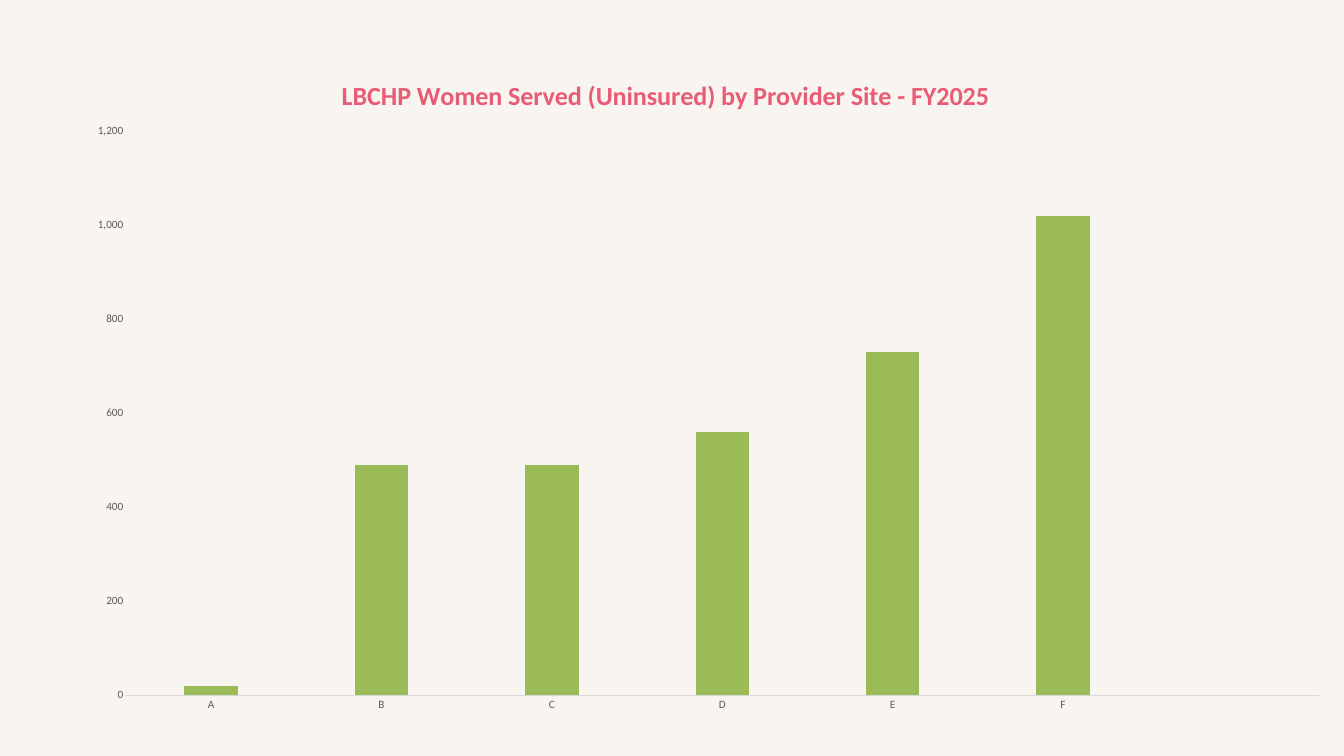
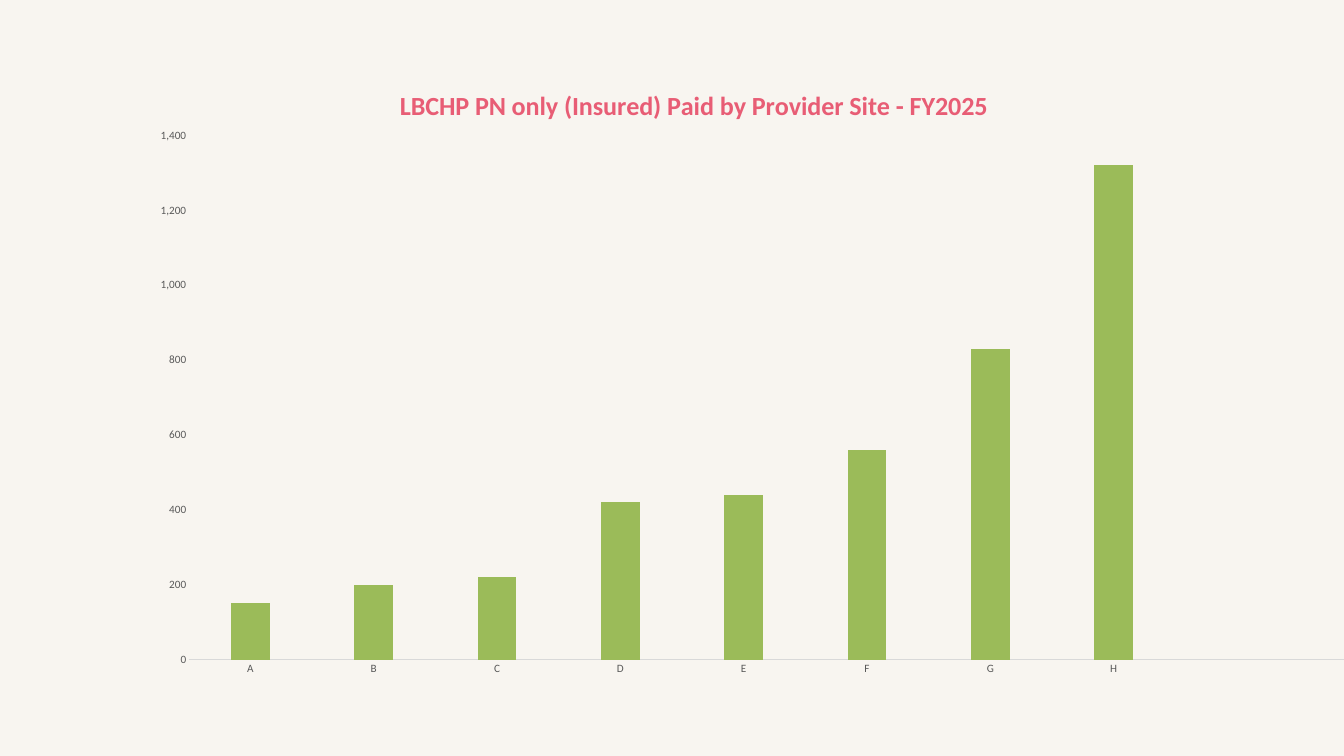
"""Build two slides of column charts on provider sites in FY2025."""
from pptx import Presentation
from pptx.chart.data import CategoryChartData as ChartData
from pptx.dml.color import RGBColor as RGB
from pptx.enum.chart import XL_CHART_TYPE as ChartType, XL_TICK_MARK as Tick
from pptx.oxml import parse_xml
from pptx.oxml.ns import nsdecls, qn
from pptx.util import Inches, Pt

COLORS = {
    "page": "F8F5F0",
    "title": "E85D75",
    "bar": "9BBB59",
    "label": "595959",
    "baseline": "D9D9D9",
}
FONT = "Calibri"


def write_text(frame, text, size, color, bold=False):
    frame.text = text
    font = frame.paragraphs[0].runs[0].font
    font.name, font.size, font.bold = FONT, Pt(size), bold
    font.color.rgb = RGB.from_string(COLORS[color])


def set_layout(parent, index, target="", **shares):
    for old in parent.findall(qn("c:layout")):
        parent.remove(old)
    area = f'<c:layoutTarget val="{target}"/>' if target else ""
    modes = "".join(f'<c:{key}Mode val="edge"/>' for key in shares if key in "xy")
    sizes = "".join(f'<c:{key} val="{share}"/>' for key, share in shares.items())
    parent.insert(index, parse_xml(
        f'<c:layout {nsdecls("c")}><c:manualLayout>{area}{modes}{sizes}'
        "</c:manualLayout></c:layout>"))


SITE_CHARTS = [
    {
        "title": "LBCHP Women Served (Uninsured) by Provider Site - FY2025",
        "counts": [20, 490, 490, 560, 730, 1020],
        "empty_slots": 1,
        "top_value": 1200,
        "frame": (0.054, 0.063, 0.946, 0.896),
        "plot": {"x": 0.042, "y": 0.123, "w": 0.938, "h": 0.833},
        "title_at": {"x": 0.208, "y": 0.038},
    },
    {
        "title": "LBCHP PN only (Insured) Paid by Provider Site - FY2025",
        "counts": [150, 200, 220, 420, 440, 560, 830, 1320],
        "empty_slots": 3,
        "top_value": 1500,
        "frame": (0.1125, 0.078, 1.0375, 0.8435),
        "plot": {"x": 0.027, "y": 0.061, "w": 0.973, "h": 0.881},
        "title_at": {"x": 0.175, "y": 0.038},
    },
]

deck = Presentation()
deck.slide_width, deck.slide_height = Inches(20), Inches(11.25)
blank = deck.slide_layouts[6]

for site_chart in SITE_CHARTS:
    slide = deck.slides.add_slide(blank)
    slide.background.fill.solid()
    slide.background.fill.fore_color.rgb = RGB.from_string(COLORS["page"])

    counts, empty_slots = site_chart["counts"], site_chart["empty_slots"]
    sites = ChartData(number_format="#,##0")
    sites.categories = list("ABCDEFGH"[:len(counts)]) + [""] * empty_slots
    sites.add_series("Series 1", counts + [None] * empty_slots)

    left, top, width, height = site_chart["frame"]
    chart = slide.shapes.add_chart(
        ChartType.COLUMN_CLUSTERED,
        int(left * deck.slide_width), int(top * deck.slide_height),
        int(width * deck.slide_width), int(height * deck.slide_height),
        sites).chart
    chart.has_legend = False
    chart.font.name, chart.font.size = FONT, Pt(10)

    chart.has_title = True
    title = chart.chart_title
    write_text(title.text_frame, site_chart["title"], size=28, color="title", bold=True)
    title.include_in_layout = False
    set_layout(title.text_frame._txBody.getparent().getparent(), 1,
               **site_chart["title_at"])

    columns = chart.plots[0]
    set_layout(columns._element.getparent(), 0, target="inner", **site_chart["plot"])
    columns.gap_width, columns.overlap = 219, -27
    columns.vary_by_categories = False
    bars = columns.series[0].format.fill
    bars.solid()
    bars.fore_color.rgb = RGB.from_string(COLORS["bar"])

    site_axis, count_axis = chart.category_axis, chart.value_axis
    for axis in (site_axis, count_axis):
        axis.has_major_gridlines = False
        axis.major_tick_mark = axis.minor_tick_mark = Tick.NONE
        labels = axis.tick_labels.font
        labels.name, labels.size = FONT, Pt(12)
        labels.color.rgb = RGB.from_string(COLORS["label"])
    site_axis.format.line.width = Pt(0.75)
    site_axis.format.line.color.rgb = RGB.from_string(COLORS["baseline"])
    count_axis.format.line.fill.background()
    count_axis.minimum_scale, count_axis.maximum_scale = 0, site_chart["top_value"]
    count_axis.major_unit = 200
    count_axis.tick_labels.number_format = "#,##0"
    count_axis.tick_labels.number_format_is_linked = False

deck.save("out.pptx")
